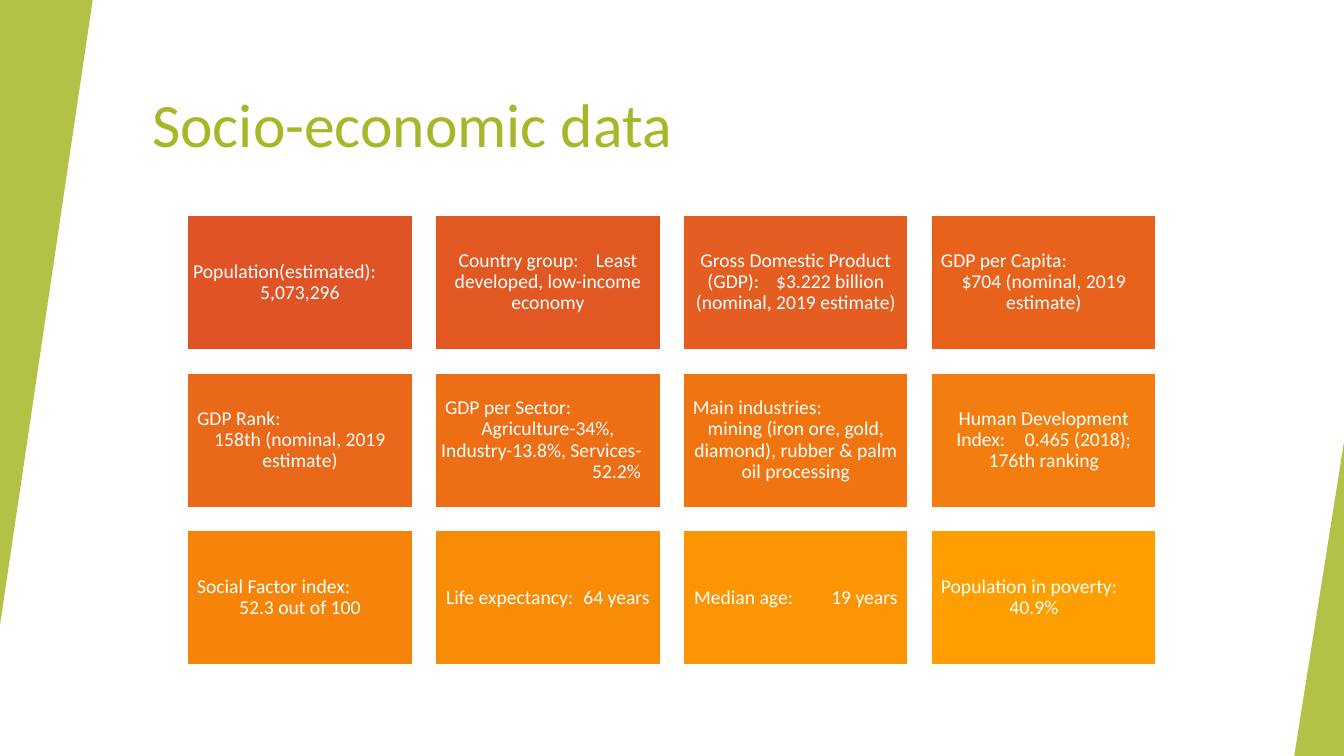
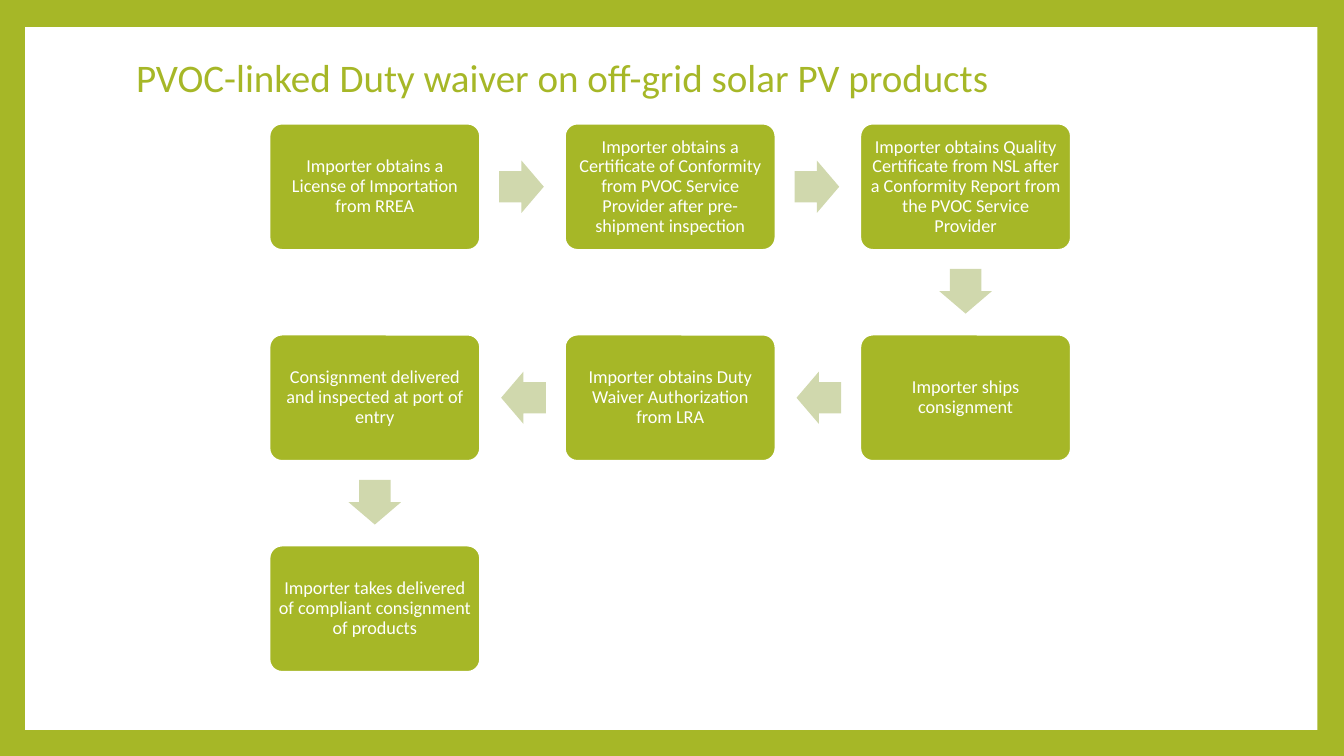
from lxml.etree import SubElement
from pptx import Presentation
from pptx.dml.color import RGBColor
from pptx.enum.shapes import MSO_SHAPE
from pptx.enum.text import MSO_ANCHOR, MSO_AUTO_SIZE, PP_ALIGN
from pptx.oxml.ns import qn
from pptx.util import Pt

WIDE, HIGH = 960, 540
FONT = "Calibri"
HEX = {"green": "A6B727", "pale": "D0D8AD", "white": "FFFFFF"}

FACTS = [
    ("DF5327", "Population(estimated): \t\t5,073,296"),
    ("E25823", "Country group:\tLeast developed, low-income economy"),
    ("E55D20", "Gross Domestic Product (GDP):\t$3.222 billion (nominal, 2019 estimate)"),
    ("E8621C", "GDP per Capita: \t\t$704 (nominal, 2019 estimate)"),
    ("EA6819", "GDP Rank: \t\t158th (nominal, 2019 estimate)"),
    ("ED6E15", "GDP per Sector:\t\tAgriculture-34%, Industry-13.8%, Services-\t\t\t\t\t52.2%"),
    ("F07511", "Main industries: \t\tmining (iron ore, gold, diamond), rubber & palm oil processing"),
    ("F37D0E", "Human Development Index: \t0.465 (2018); 176th ranking"),
    ("F6840A", "Social Factor index: \t52.3 out of 100"),
    ("F98C06", "Life expectancy: \t64 years"),
    ("FC9503", "Median age: \t19 years"),
    ("FE9E00", "Population in poverty: \t40.9%\t"),
]

STEPS = [
    "Importer obtains a License of Importation from RREA",
    "Importer obtains a Certificate of Conformity from PVOC Service Provider after pre-shipment inspection",
    "Importer obtains Quality Certificate from NSL after a Conformity Report from the PVOC Service Provider",
    "Importer ships consignment",
    "Importer obtains Duty Waiver Authorization from LRA",
    "Consignment delivered and inspected at port of entry",
    "Importer takes delivered of compliant consignment of products",
]

WEDGES = [(0, 0, 66.2, 446.4, 180), (924.5, 316, 35.5, 224, 0)]


def tint(hue):
    return RGBColor.from_string(HEX.get(hue, hue))


def style(par, size, hue, align):
    par.font.name = FONT
    par.font.size = Pt(size)
    par.font.color.rgb = tint(hue)
    par.alignment = align
    par.line_spacing = 0.9


def draw(slide, kind, box, fill, edge=None, adj=(), turn=0):
    shape = slide.shapes.add_shape(kind, *map(Pt, box))
    shape.shadow.inherit = False
    shape.fill.solid()
    shape.fill.fore_color.rgb = tint(fill)
    if edge:
        shape.line.color.rgb = tint(edge)
        shape.line.width = Pt(1.5)
    else:
        shape.line.fill.background()
    for i, part in enumerate(adj):
        shape.adjustments[i] = part
    shape.rotation = turn
    return shape


def label(shape, text, size):
    frame = shape.text_frame
    frame.word_wrap = True
    frame.vertical_anchor = MSO_ANCHOR.MIDDLE
    inset = Pt(size * 0.3)
    frame.margin_left = frame.margin_right = inset
    frame.margin_top = frame.margin_bottom = inset
    par = frame.paragraphs[0]
    par.text = text
    style(par, size, "white", PP_ALIGN.CENTER)
    par._p.get_or_add_pPr().set("defTabSz", str(Pt(size * 3.5)))


def start(deck, text, box, size):
    slide = deck.slides.add_slide(deck.slide_layouts[5])
    title = slide.shapes.title
    title.left, title.top, title.width, title.height = map(Pt, box)
    frame = title.text_frame
    frame.text = text
    frame.auto_size = MSO_AUTO_SIZE.NONE
    frame.vertical_anchor = MSO_ANCHOR.MIDDLE
    style(frame.paragraphs[0], size, "green", PP_ALIGN.LEFT)
    return slide


def add_frame(deck, slide):
    master = deck.slide_master
    master.background.fill.solid()
    master.background.fill.fore_color.rgb = tint("green")
    panel = draw(slide, MSO_SHAPE.RECTANGLE, (18, 19.3, 923, 502), "white")
    master.shapes._spTree.insert(2, panel._element)


def add_facts(slide):
    slide.background.fill.solid()
    slide.background.fill.fore_color.rgb = tint("white")
    for *box, turn in WEDGES:
        wedge = draw(slide, MSO_SHAPE.ISOSCELES_TRIANGLE, box, "green", adj=[1], turn=turn)
        color = wedge._element.spPr.find(qn("a:solidFill"))[0]
        SubElement(color, qn("a:alpha")).set("val", "85000")
    wide, high, gap = 161, 96.6, 16.1
    for i, (hue, text) in enumerate(FACTS):
        row, col = divmod(i, 4)
        box = (133.8 + col * (wide + gap), 153.4 + row * (high + gap), wide, high)
        label(draw(slide, MSO_SHAPE.RECTANGLE, box, hue, "white"), text, 14)


def add_steps(slide):
    wide, high = 150.6, 90.4
    mids = []
    for i, text in enumerate(STEPS):
        row, col = divmod(i, 3)
        if row % 2:
            col = 2 - col
        x, y = 192.4 + col * 211, 88.2 + row * 150.7
        mids.append((x + wide / 2, y + high / 2))
        step = draw(slide, MSO_SHAPE.ROUNDED_RECTANGLE, (x, y, wide, high), "green", "white", [0.1])
        label(step, text, 13)
    span, thick, lag = 31.9, 37.4, 0.7
    for (x, y), (to_x, to_y) in zip(mids, mids[1:]):
        go_x = (to_x > x) - (to_x < x)
        go_y = int(to_y > y)
        mid_x = (x + to_x) / 2 - lag * go_x
        mid_y = (y + to_y) / 2 - lag * go_y
        turn = 90 if go_y else 90 - 90 * go_x
        box = (mid_x - span / 2, mid_y - thick / 2, span, thick)
        draw(slide, MSO_SHAPE.RIGHT_ARROW, box, "pale", adj=[0.6, 0.5], turn=turn)


def main():
    deck = Presentation()
    deck.slide_width, deck.slide_height = Pt(WIDE), Pt(HIGH)
    data = start(deck, "Socio-economic data", (101.5, 48, 803, 86.4), 44)
    add_frame(deck, data)
    add_facts(data)
    flow = start(deck, "PVOC-linked Duty waiver on off-grid solar PV products",
                 (90, 36, 778, 42), 27.9)
    add_steps(flow)
    deck.save("out.pptx")


if __name__ == "__main__":
    main()
